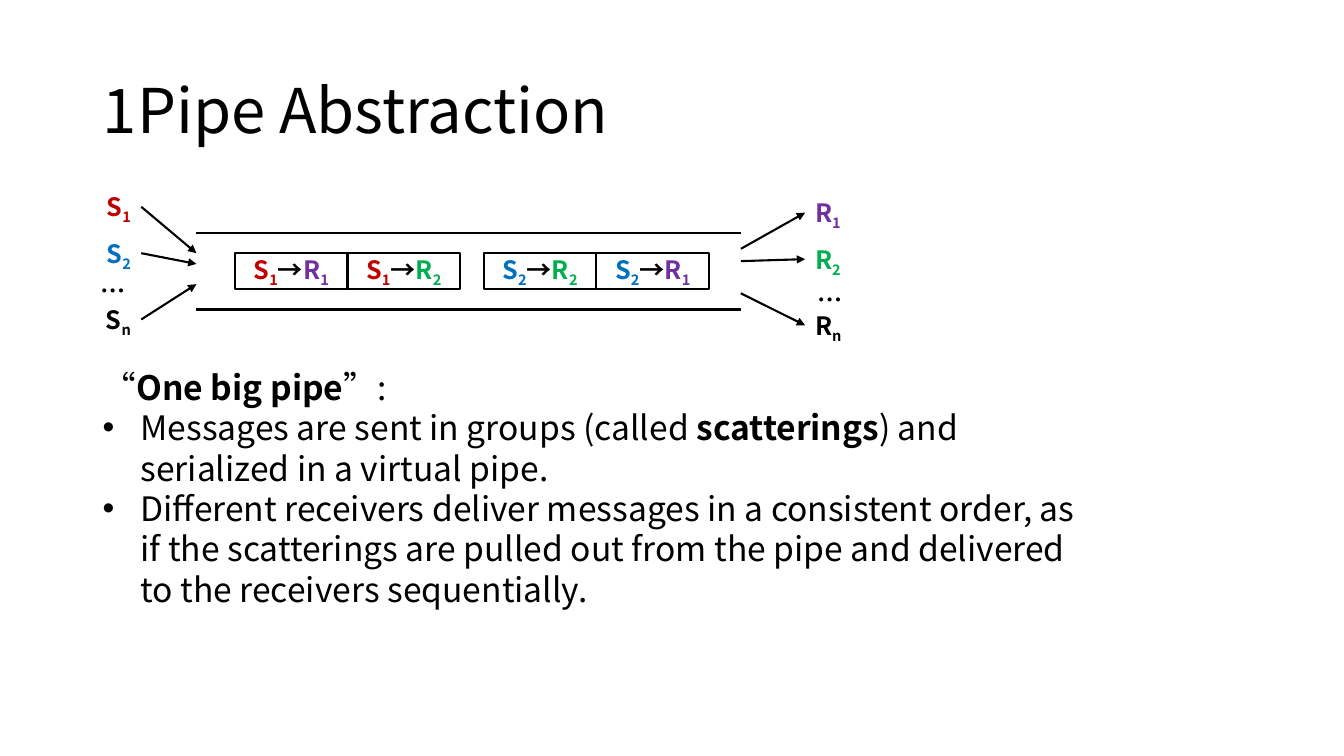
from dataclasses import dataclass

from lxml.etree import SubElement
from pptx import Presentation
from pptx.dml.color import RGBColor
from pptx.enum.shapes import MSO_CONNECTOR, MSO_SHAPE
from pptx.enum.text import MSO_ANCHOR, MSO_AUTO_SIZE, PP_ALIGN
from pptx.oxml.ns import qn
from pptx.util import Cm, Pt


@dataclass(frozen=True)
class Theme:
    font: str = "Noto Sans CJK SC"
    black: str = "000000"
    white: str = "FFFFFF"
    red: str = "C00000"
    blue: str = "0070C0"
    purple: str = "7030A0"
    green: str = "00B050"
    title: int = 44
    body: int = 24
    label: int = 18
    stroke: float = 1.5


THEME = Theme()
SENDERS = {"1": THEME.red, "2": THEME.blue, "n": THEME.black}
RECEIVERS = {"1": THEME.purple, "2": THEME.green, "n": THEME.black}
ROW_OFFSETS = (0, 1.17, 2.84)
LABEL_WIDTH, LABEL_HEIGHT = 1.42, 1.02
PIPE_LEFT, PIPE_RIGHT = 4.95, 18.67
CELL_WIDTH, CELL_HEIGHT, CELL_TOP = 2.84, 0.91, 6.38
SCATTERINGS = (
    (5.92, (("1", "1"), ("1", "2"))),
    (12.19, (("2", "2"), ("2", "1"))),
)
BULLET_INDENT = Cm(0.95)


def add_run(paragraph, text, size, color=THEME.black, bold=False, subscript=False):
    run = paragraph.add_run()
    run.text = text
    run.font.name = THEME.font
    run.font.size = Pt(size)
    run.font.bold = bold
    run.font.color.rgb = RGBColor.from_string(color)
    properties = run.font._element
    SubElement(properties, qn("a:ea")).set("typeface", THEME.font)
    if subscript:
        properties.set("baseline", "-25000")


def add_endpoint(paragraph, letter, index, colors):
    add_run(paragraph, letter, THEME.label, colors[index], bold=True)
    add_run(paragraph, index, THEME.label, colors[index], bold=True, subscript=True)


def add_text_frame(slide, left, top, width, height):
    frame = slide.shapes.add_textbox(Cm(left), Cm(top), Cm(width), Cm(height)).text_frame
    frame.word_wrap = True
    frame.auto_size = MSO_AUTO_SIZE.SHAPE_TO_FIT_TEXT
    return frame


def add_label(slide, left, top, align):
    paragraph = add_text_frame(slide, left, top, LABEL_WIDTH, LABEL_HEIGHT).paragraphs[0]
    paragraph.alignment = align
    return paragraph


def add_line(slide, start, end, arrow=False):
    points = [Cm(value) for value in (*start, *end)]
    line = slide.shapes.add_connector(MSO_CONNECTOR.STRAIGHT, *points)
    line.line.color.rgb = RGBColor.from_string(THEME.black)
    line.line.width = Pt(THEME.stroke)
    if arrow:
        SubElement(line.line._get_or_add_ln(), qn("a:tailEnd")).set("type", "triangle")
    SubElement(line._element.spPr, qn("a:effectLst"))


def add_message(slide, left, sender, receiver):
    message = slide.shapes.add_shape(
        MSO_SHAPE.RECTANGLE, Cm(left), Cm(CELL_TOP), Cm(CELL_WIDTH), Cm(CELL_HEIGHT)
    )
    message.shadow.inherit = False
    message.fill.solid()
    message.fill.fore_color.rgb = RGBColor.from_string(THEME.white)
    message.line.color.rgb = RGBColor.from_string(THEME.black)
    message.line.width = Pt(THEME.stroke)
    message.text_frame.vertical_anchor = MSO_ANCHOR.MIDDLE
    paragraph = message.text_frame.paragraphs[0]
    paragraph.alignment = PP_ALIGN.CENTER
    add_endpoint(paragraph, "S", sender, SENDERS)
    add_run(paragraph, "→", THEME.label, bold=True)
    add_endpoint(paragraph, "R", receiver, RECEIVERS)


def add_title(slide):
    title = slide.shapes.title
    title.left, title.top, title.width, title.height = Cm(2.34), Cm(1.02), Cm(29.21), Cm(3.68)
    frame = title.text_frame
    frame.auto_size = MSO_AUTO_SIZE.NONE
    frame.vertical_anchor = MSO_ANCHOR.MIDDLE
    paragraph = frame.paragraphs[0]
    paragraph.alignment = PP_ALIGN.LEFT
    paragraph.line_spacing = 0.9
    add_run(paragraph, "1Pipe Abstraction", THEME.title)


def add_pipe(slide):
    for left, messages in SCATTERINGS:
        for position, (sender, receiver) in enumerate(messages):
            add_message(slide, left + position * CELL_WIDTH, sender, receiver)
    for wall in (5.87, 7.8):
        add_line(slide, (PIPE_RIGHT, wall), (PIPE_LEFT, wall))


def add_senders(slide):
    for index, offset, entry in zip(SENDERS, ROW_OFFSETS, (6.38, 6.65, 7.16)):
        top = 4.7 + offset
        add_endpoint(add_label(slide, 2.13, top, PP_ALIGN.RIGHT), "S", index, SENDERS)
        add_line(slide, (3.56, top + LABEL_HEIGHT / 2), (PIPE_LEFT, entry), arrow=True)
    add_run(add_label(slide, 2.01, 6.81, PP_ALIGN.RIGHT), "…", THEME.label, bold=True)


def add_receivers(slide):
    for index, offset, outlet in zip(RECEIVERS, ROW_OFFSETS, (6.27, 6.58, 7.39)):
        top = 4.85 + offset
        add_endpoint(add_label(slide, 20.29, top, PP_ALIGN.LEFT), "R", index, RECEIVERS)
        add_line(slide, (PIPE_RIGHT, outlet), (20.29, top + LABEL_HEIGHT / 2), arrow=True)
    add_run(add_label(slide, 20.35, 7.04, PP_ALIGN.LEFT), "…", THEME.label, bold=True)


def add_bullet(paragraph):
    properties = paragraph._p.get_or_add_pPr()
    properties.set("marL", str(BULLET_INDENT))
    properties.set("indent", str(-BULLET_INDENT))
    SubElement(properties, qn("a:buFont")).set("typeface", "Arial")
    SubElement(properties, qn("a:buChar")).set("char", "•")


def add_explanation(slide):
    frame = add_text_frame(slide, 2.34, 9.12, 25.04, 8.46)
    heading = frame.paragraphs[0]
    add_run(heading, "“", THEME.body)
    add_run(heading, "One big pipe", THEME.body, bold=True)
    add_run(heading, "”:", THEME.body)

    sending = frame.add_paragraph()
    add_bullet(sending)
    add_run(sending, "Messages are sent in groups (called ", THEME.body)
    add_run(sending, "scatterings", THEME.body, bold=True)
    add_run(sending, ") and serialized in a virtual pipe.", THEME.body)

    delivery = frame.add_paragraph()
    add_bullet(delivery)
    add_run(
        delivery,
        "Different receivers deliver messages in a consistent order, as if the scatterings "
        "are pulled out from the pipe and delivered to the receivers sequentially.",
        THEME.body,
    )


def main():
    presentation = Presentation()
    presentation.slide_width, presentation.slide_height = Cm(33.87), Cm(19.05)
    title_only = presentation.slide_layouts.get_by_name("Title Only")
    slide = presentation.slides.add_slide(title_only)
    add_title(slide)
    add_pipe(slide)
    add_senders(slide)
    add_receivers(slide)
    add_explanation(slide)
    presentation.save("out.pptx")


if __name__ == "__main__":
    main()
